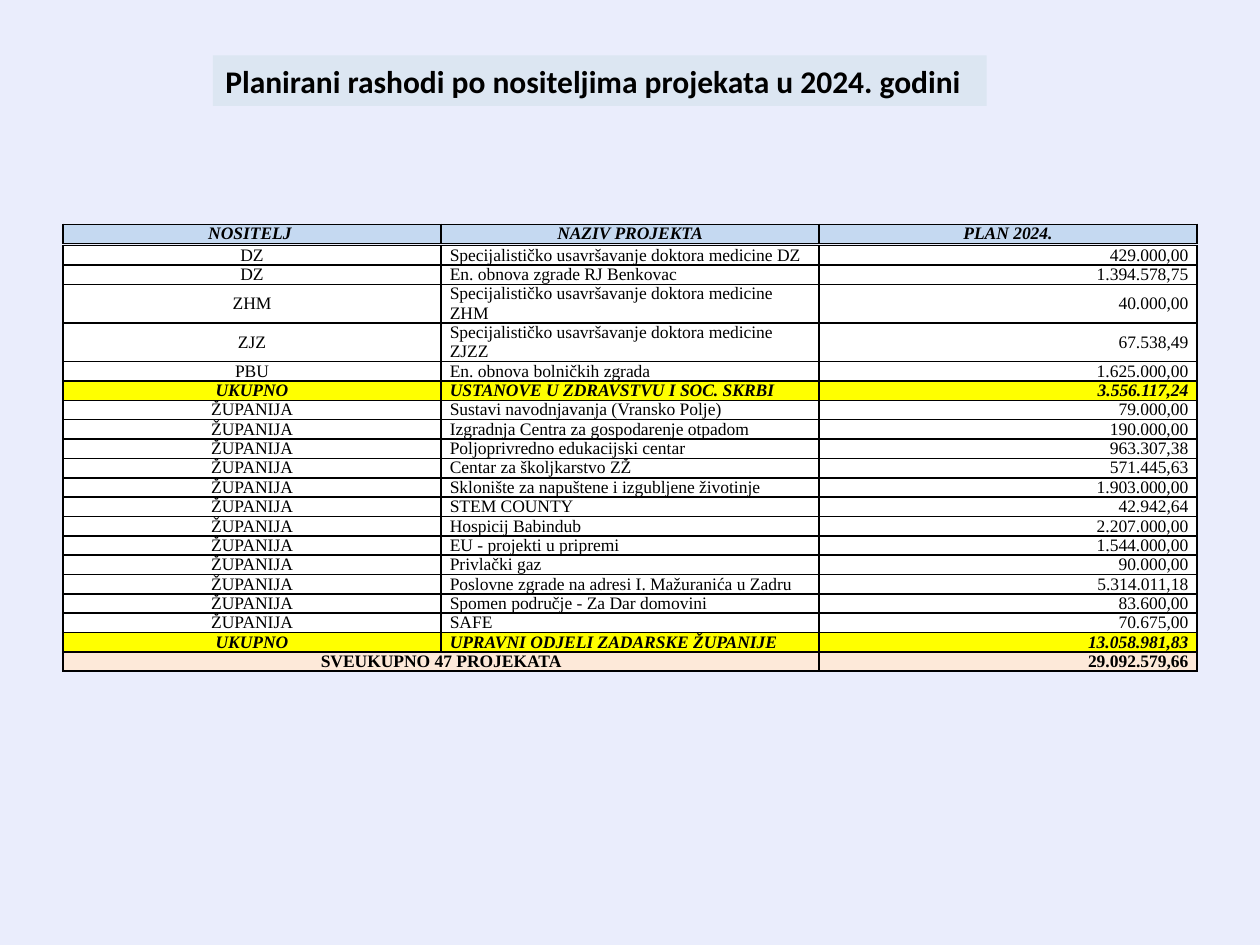
from pptx import Presentation
from pptx import util as u
from pptx.dml.color import RGBColor
from pptx.enum import shapes, text
from pptx.oxml import parse_xml
from pptx.oxml.ns import nsdecls

BACK = RGBColor(0xEA, 0xED, 0xFC)
BLACK = RGBColor(0, 0, 0)
WHITE = RGBColor(255, 255, 255)
BLUE = RGBColor(0xC5, 0xD9, 0xF1)
PALE = RGBColor(0xDC, 0xE6, 0xF2)
YELLOW = RGBColor(255, 255, 0)
PEACH = RGBColor(0xFD, 0xE9, 0xD9)

LEFT, MID, RIGHT = text.PP_ALIGN.LEFT, text.PP_ALIGN.CENTER, text.PP_ALIGN.RIGHT

HEAD = ("NOSITELJ ", "NAZIV PROJEKTA", "PLAN 2024.")
HEALTH = [
    ("DZ", "Specijalističko usavršavanje doktora medicine DZ", "429.000,00"),
    ("DZ", "En. obnova zgrade RJ Benkovac", "1.394.578,75"),
    ("ZHM", "Specijalističko usavršavanje doktora medicine ZHM", "40.000,00"),
    ("ZJZ", "Specijalističko usavršavanje doktora medicine ZJZZ", "67.538,49"),
    ("PBU", "En. obnova bolničkih zgrada", "1.625.000,00"),
]
COUNTY = [
    ("Sustavi navodnjavanja (Vransko Polje)", "79.000,00"),
    ("Izgradnja Centra za gospodarenje otpadom", "190.000,00"),
    ("Poljoprivredno edukacijski centar", "963.307,38"),
    ("Centar za školjkarstvo ZŽ", "571.445,63"),
    ("Sklonište za napuštene i izgubljene životinje", "1.903.000,00"),
    ("STEM COUNTY", "42.942,64"),
    ("Hospicij Babindub", "2.207.000,00"),
    ("EU - projekti u pripremi", "1.544.000,00"),
    ("Privlački gaz", "90.000,00"),
    ("Poslovne zgrade na adresi I. Mažuranića u Zadru", "5.314.011,18"),
    ("Spomen područje - Za Dar domovini", "83.600,00"),
    ("SAFE", "70.675,00"),
]
ROWS = [
    *HEALTH,
    ("UKUPNO", "USTANOVE U ZDRAVSTVU I SOC. SKRBI", "3.556.117,24"),
    *(("ŽUPANIJA", *item) for item in COUNTY),
    ("UKUPNO", "UPRAVNI ODJELI ZADARSKE ŽUPANIJE", "13.058.981,83"),
    ("SVEUKUPNO 47 PROJEKATA", "", "29.092.579,66"),
]


def add_run(para, words, font, size, bold=False, slant=False):
    run = para.add_run()
    run.text = words
    run.font.name = font
    run.font.size = u.Pt(size)
    run.font.bold = bold
    run.font.italic = slant
    run.font.color.rgb = BLACK


def set_edges(cell):
    props = cell._tc.get_or_add_tcPr()
    for i, side in enumerate(("lnL", "lnR", "lnT", "lnB")):
        props.insert(i, parse_xml(
            f'<a:{side} {nsdecls("a")} w="12700"><a:solidFill>'
            f'<a:srgbClr val="{BLACK}"/></a:solidFill></a:{side}>'))


def fill_cell(cell, words, align, fill, bold, slant):
    cell.margin_left = cell.margin_right = u.Inches(0.07)
    cell.margin_top = cell.margin_bottom = 0
    cell.vertical_anchor = text.MSO_ANCHOR.MIDDLE
    cell.fill.solid()
    cell.fill.fore_color.rgb = fill
    set_edges(cell)
    para = cell.text_frame.paragraphs[0]
    para.alignment = align
    if words:
        add_run(para, words, "Times New Roman", 10, bold, slant)


def style_of(name):
    """Fill, bold and italic of a row, by its first cell."""
    if name == HEAD[0]:
        return BLUE, True, True
    if name == "UKUPNO":
        return YELLOW, True, True
    if name.startswith("SVEUKUPNO"):
        return PEACH, True, False
    return WHITE, False, False


def add_grid(slide, rows, top, high, aligns):
    frame = slide.shapes.add_table(len(rows), 3, u.Inches(0.5), u.Inches(top),
                                   u.Inches(9), u.Inches(high))
    grid = frame.table
    grid.first_row = grid.horz_banding = False
    for r, row in enumerate(rows):
        # Rows grow to fit their text
        grid.rows[r].height = u.Inches(0.04)
        for c, words in enumerate(row):
            fill_cell(grid.cell(r, c), words, aligns[c], *style_of(row[0]))
    frame.height = u.Inches(high)
    return grid


def add_title(slide, words):
    box = slide.shapes.add_shape(shapes.MSO_SHAPE.RECTANGLE, u.Inches(1.69),
                                 u.Inches(0.44), u.Inches(6.14), u.Inches(0.4))
    box.shadow.inherit = False
    box.fill.solid()
    box.fill.fore_color.rgb = PALE
    box.line.fill.background()
    frame = box.text_frame
    frame.word_wrap = True
    frame.auto_size = text.MSO_AUTO_SIZE.SHAPE_TO_FIT_TEXT
    frame.vertical_anchor = text.MSO_ANCHOR.TOP
    para = frame.paragraphs[0]
    para.alignment = LEFT
    add_run(para, words, "Calibri", 18, bold=True)


def main():
    deck = Presentation()
    deck.slide_width, deck.slide_height = u.Inches(10), u.Inches(7.5)
    slide = deck.slides.add_slide(deck.slide_layouts[6])
    slide.background.fill.solid()
    slide.background.fill.fore_color.rgb = BACK

    # Projects, with the grand total across two columns
    grid = add_grid(slide, ROWS, 1.95, 3.67, (MID, LEFT, RIGHT))
    last = len(ROWS) - 1
    grid.cell(last, 0).merge(grid.cell(last, 1))
    grid.cell(last, 2).vertical_anchor = text.MSO_ANCHOR.BOTTOM

    # Column heads
    add_grid(slide, [HEAD], 1.78, 0.17, (MID, MID, MID))

    # Title
    add_title(slide, "Planirani rashodi po nositeljima projekata u 2024. godini")
    deck.save("out.pptx")


if __name__ == "__main__":
    main()
